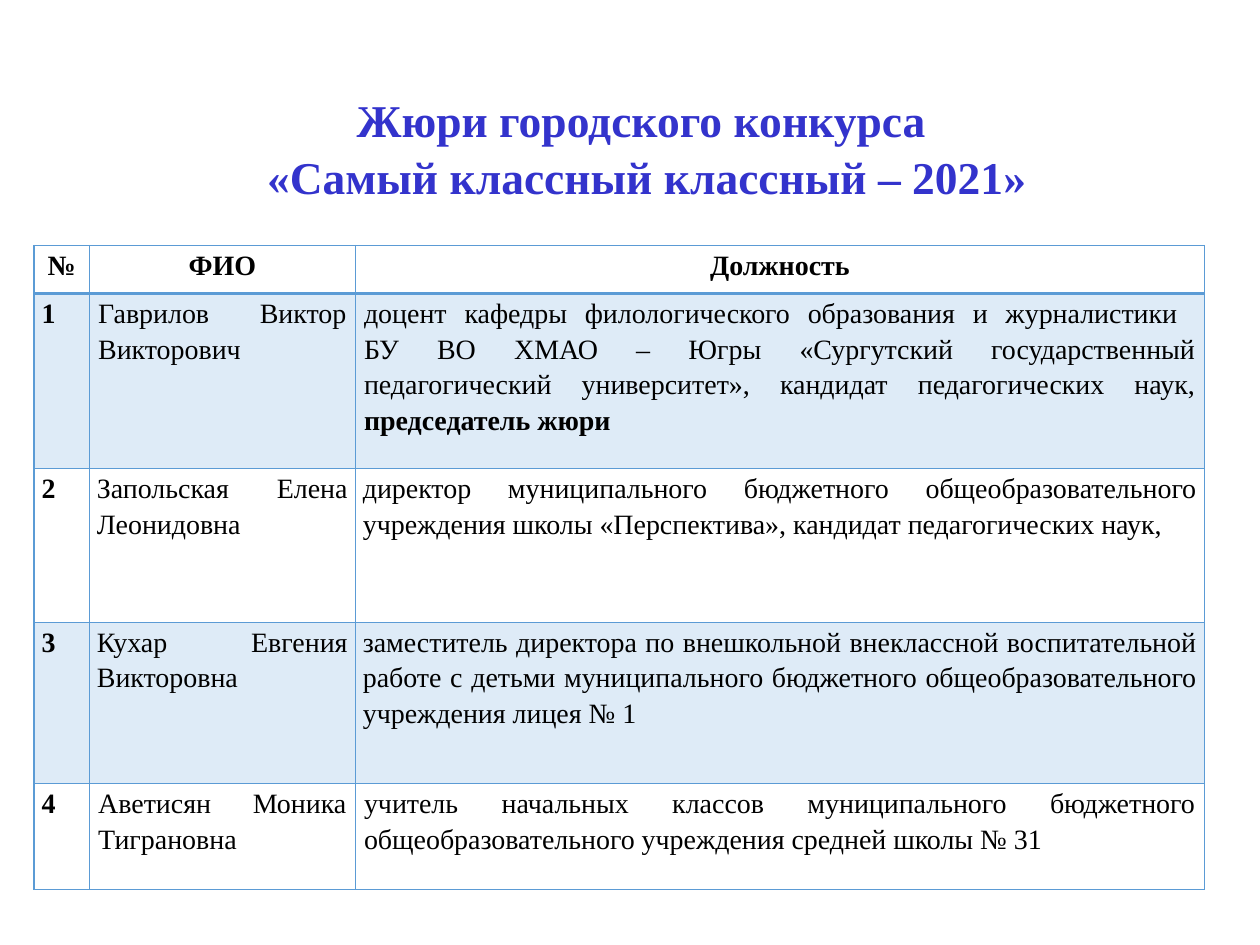
"""Build the slide that lists the jury of the city contest."""
from dataclasses import dataclass

from lxml import etree
from pptx import Presentation
from pptx.dml.color import RGBColor
from pptx.enum.text import MSO_ANCHOR, MSO_AUTO_SIZE, PP_ALIGN
from pptx.oxml.ns import qn
from pptx.util import Inches, Pt

CENTER = PP_ALIGN.CENTER
JUSTIFY = PP_ALIGN.JUSTIFY
MIDDLE = MSO_ANCHOR.MIDDLE
TOP = MSO_ANCHOR.TOP
GROW = MSO_AUTO_SIZE.SHAPE_TO_FIT_TEXT
TITLE_ONLY = 5


@dataclass(frozen=True)
class Theme:
    font: str = "Times New Roman"
    title_color: str = "3333CC"
    text_color: str = "000000"
    border_color: str = "5B9BD5"
    band_color: str = "DEEBF7"
    plain_color: str = "FFFFFF"
    title_size: int = 26
    table_size: int = 16
    title_spacing: float = 1.05
    table_spacing: float = 1.15
    thin_border: int = 1
    header_border: int = 2


@dataclass(frozen=True)
class Member:
    name: str
    position: str
    role: str = ""
    margin: float = 0.06


THEME = Theme()
TITLE_LINES = ("Жюри городского конкурса ", "«Самый классный классный – 2021»")
HEADINGS = ("№", "ФИО", "Должность")
COLUMN_WIDTHS = (0.44, 2.11, 6.74)
ROW_HEIGHTS = (0.38, 1.39, 1.22, 1.28, 0.84)
NUMBER_MARGIN = 0.06
MEMBERS = (
    Member(
        "Гаврилов Виктор Викторович",
        "доцент кафедры филологического образования и журналистики \n"
        "БУ ВО ХМАО – Югры «Сургутский государственный педагогический "
        "университет», кандидат педагогических наук, ",
        role="председатель жюри",
        margin=0.07,
    ),
    Member(
        "Запольская Елена Леонидовна",
        "директор муниципального бюджетного общеобразовательного "
        "учреждения школы «Перспектива», кандидат педагогических наук,",
    ),
    Member(
        "Кухар Евгения Викторовна",
        "заместитель директора по внешкольной внеклассной воспитательной "
        "работе с детьми муниципального бюджетного общеобразовательного "
        "учреждения лицея № 1",
    ),
    Member(
        "Аветисян Моника Тиграновна",
        "учитель начальных классов муниципального бюджетного "
        "общеобразовательного учреждения средней школы № 31",
        margin=0.07,
    ),
)


def add_text(paragraph, text: str, *, size: int = THEME.table_size,
             color: str = THEME.text_color, bold: bool = False,
             align=JUSTIFY, spacing: float = THEME.table_spacing) -> None:
    """Append formatted text to a paragraph, breaking lines at newlines."""
    paragraph.alignment = align
    paragraph.line_spacing = spacing
    for index, line in enumerate(text.split("\n")):
        if index:
            paragraph.add_line_break()
        run = paragraph.add_run()
        run.text = line
        run.font.name = THEME.font
        run.font.size = Pt(size)
        run.font.bold = bold
        run.font.color.rgb = RGBColor.from_string(color)


def add_title(slide) -> None:
    """Place the two centred title lines in the title placeholder."""
    title = slide.shapes.title
    title.left, title.top = Inches(0.42), Inches(0.67)
    title.width, title.height = Inches(9.43), Inches(0.98)
    frame = title.text_frame
    frame.word_wrap = True
    frame.auto_size = GROW
    frame.vertical_anchor = MIDDLE
    for index, line in enumerate(TITLE_LINES):
        paragraph = frame.add_paragraph() if index else frame.paragraphs[0]
        paragraph.space_before = Pt(0)
        add_text(paragraph, line, size=THEME.title_size, color=THEME.title_color,
                 bold=True, align=CENTER, spacing=THEME.title_spacing)


def add_borders(cell, top: int, bottom: int) -> None:
    """Draw the four borders of a cell, with widths in points."""
    thin = THEME.thin_border
    properties = cell._tc.get_or_add_tcPr()
    for side, width in (("L", thin), ("R", thin), ("T", top), ("B", bottom)):
        line = etree.SubElement(properties, qn(f"a:ln{side}"), w=str(Pt(width)))
        fill = etree.SubElement(line, qn("a:solidFill"))
        etree.SubElement(fill, qn("a:srgbClr"), val=THEME.border_color)


def format_cell(cell, row: int, margin: float) -> None:
    """Set the margins, borders and band fill of a cell."""
    cell.margin_left = cell.margin_right = Inches(margin)
    cell.margin_top = cell.margin_bottom = 0
    cell.vertical_anchor = TOP
    thin, thick = THEME.thin_border, THEME.header_border
    add_borders(cell, thick if row == 1 else thin, thick if row == 0 else thin)
    cell.fill.solid()
    color = THEME.band_color if row % 2 else THEME.plain_color
    cell.fill.fore_color.rgb = RGBColor.from_string(color)


def add_member(table, row: int, member: Member) -> None:
    """Fill one table row with a jury member."""
    number, name, position = (table.cell(row, column) for column in range(3))
    format_cell(number, row, NUMBER_MARGIN)
    format_cell(name, row, member.margin)
    format_cell(position, row, member.margin)
    add_text(number.text_frame.paragraphs[0], str(row), bold=True)
    add_text(name.text_frame.paragraphs[0], member.name)
    paragraph = position.text_frame.paragraphs[0]
    add_text(paragraph, member.position)
    if member.role:
        add_text(paragraph, member.role, bold=True)


def add_jury_table(slide) -> None:
    """Add the table of jury members below the title."""
    table = slide.shapes.add_table(
        len(ROW_HEIGHTS), len(COLUMN_WIDTHS), Inches(0.27), Inches(1.95),
        Inches(sum(COLUMN_WIDTHS)), Inches(sum(ROW_HEIGHTS))).table
    table.first_row = table.horz_banding = False
    for column, width in zip(table.columns, COLUMN_WIDTHS):
        column.width = Inches(width)
    for row, height in zip(table.rows, ROW_HEIGHTS):
        row.height = Inches(height)
    for column, heading in enumerate(HEADINGS):
        cell = table.cell(0, column)
        format_cell(cell, 0, NUMBER_MARGIN)
        add_text(cell.text_frame.paragraphs[0], heading, bold=True, align=CENTER)
    for row, member in enumerate(MEMBERS, start=1):
        add_member(table, row, member)


def main() -> None:
    """Create and save the presentation."""
    presentation = Presentation()
    presentation.slide_width, presentation.slide_height = Inches(10), Inches(7.5)
    slide = presentation.slides.add_slide(presentation.slide_layouts[TITLE_ONLY])
    add_title(slide)
    add_jury_table(slide)
    presentation.save("out.pptx")


if __name__ == "__main__":
    main()
